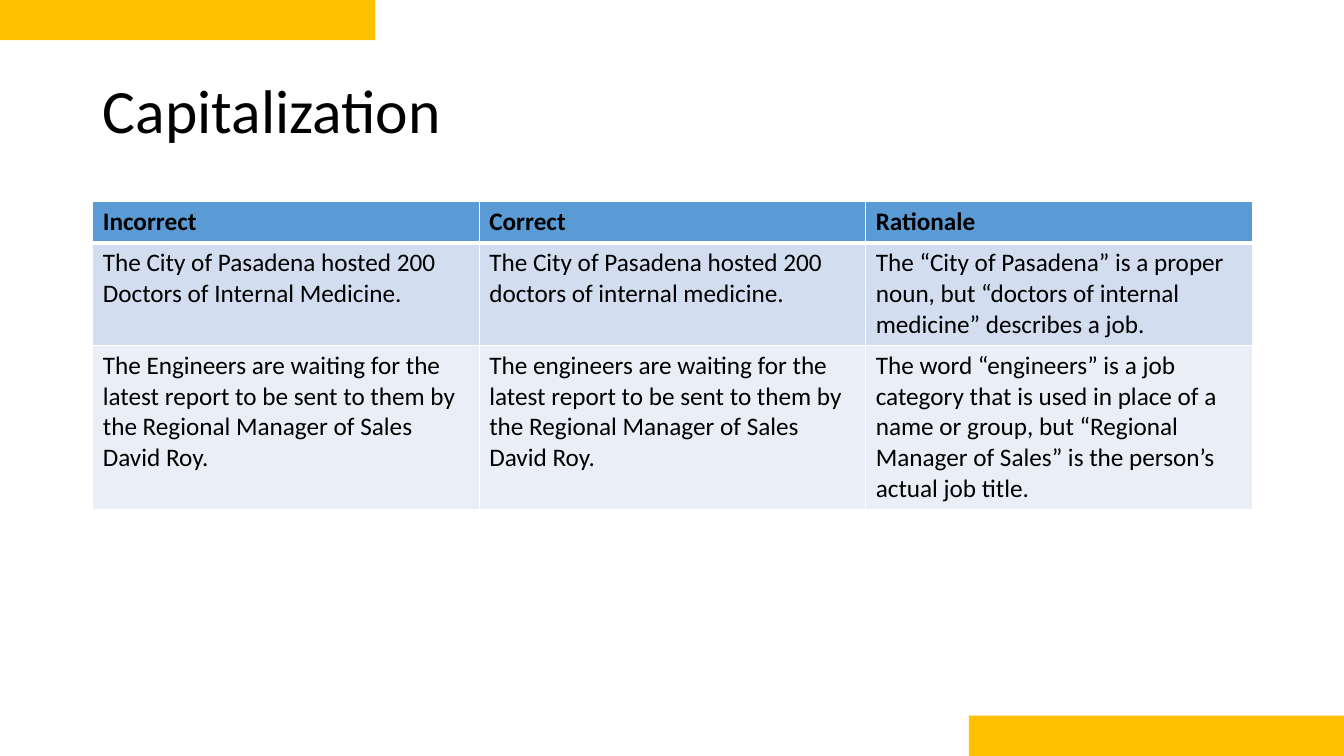
"""Build the slide on capitalization with its table and two corner bars."""
from dataclasses import dataclass
from typing import Any

from lxml.etree import SubElement
from pptx import Presentation
from pptx.dml.color import RGBColor
from pptx.enum.shapes import MSO_SHAPE
from pptx.enum.text import MSO_ANCHOR, MSO_AUTO_SIZE, PP_ALIGN
from pptx.oxml.ns import qn
from pptx.util import Inches, Pt

WIDTH, HEIGHT = 13.33, 7.5
LEFT, SPAN = 0.92, 11.5
WHITE, BLACK, GOLD = "FFFFFF", "000000", "FFC000"


@dataclass
class Bar:
    left: float
    top: float
    width: float = 3.72
    height: float = 0.4


@dataclass
class Row:
    texts: tuple[str, str, str]
    height: float
    fill: str
    bold: bool = False
    above: int = 1
    below: int = 1


BARS = [Bar(0, 0), Bar(WIDTH - 3.72, HEIGHT - 0.4)]

ROWS = [
    Row(("Incorrect", "Correct", "Rationale"), 0.41, "5B9BD5", bold=True, below=3),
    Row(
        (
            "The City of Pasadena hosted 200 Doctors of Internal Medicine.",
            "The City of Pasadena hosted 200 doctors of internal medicine.",
            "The “City of Pasadena” is a proper noun, but “doctors of internal "
            "medicine” describes a job.",
        ),
        1.0, "D2DEEF", above=3,
    ),
    Row(
        (
            "The Engineers are waiting for the latest report to be sent to them "
            "by the Regional Manager of Sales David Roy.",
            "The engineers are waiting for the latest report to be sent to them "
            "by the Regional Manager of Sales David Roy.",
            "The word “engineers” is a job category that is used in place of a "
            "name or group, but “Regional Manager of Sales” is the person’s "
            "actual job title.",
        ),
        1.6, "EAEFF7",
    ),
]


def color(code: str) -> RGBColor:
    return RGBColor.from_string(code)


def apply(target: Any, values: dict[str, Any]) -> None:
    for name, value in values.items():
        setattr(target, name, value)


def place(shape: Any, left: float, top: float, width: float, height: float) -> None:
    box = {"left": left, "top": top, "width": width, "height": height}
    apply(shape, {name: Inches(value) for name, value in box.items()})


def write(frame: Any, text: str, size: int, bold: bool = False) -> None:
    frame.text = text
    font = frame.paragraphs[0].runs[0].font
    apply(font, {"name": "Calibri", "size": Pt(size), "bold": bold})
    font.color.rgb = color(BLACK)


def paint(item: Any, code: str) -> None:
    item.fill.solid()
    item.fill.fore_color.rgb = color(code)


def edge(cell: Any, row: Row) -> None:
    props = cell._tc.get_or_add_tcPr()
    for side, points in {"L": 1, "R": 1, "T": row.above, "B": row.below}.items():
        line = SubElement(props, qn(f"a:ln{side}"), w=str(Pt(points)))
        SubElement(SubElement(line, qn("a:solidFill")), qn("a:srgbClr"), val=WHITE)


def add_title(slide: Any) -> None:
    title = slide.shapes.title
    place(title, LEFT, 0.4, SPAN, 1.45)
    write(title.text_frame, "Capitalization", 44)
    apply(title.text_frame, {
        "vertical_anchor": MSO_ANCHOR.MIDDLE,
        "auto_size": MSO_AUTO_SIZE.NONE,
        "word_wrap": True,
    })
    apply(title.text_frame.paragraphs[0], {
        "alignment": PP_ALIGN.LEFT,
        "line_spacing": 0.9,
    })


def add_grid(slide: Any) -> None:
    count = len(ROWS[0].texts)
    total = sum(row.height for row in ROWS)
    grid = slide.shapes.add_table(
        len(ROWS), count, Inches(LEFT), Inches(2), Inches(SPAN), Inches(total)
    ).table
    for column in grid.columns:
        column.width = Inches(SPAN / count)
    for i, row in enumerate(ROWS):
        grid.rows[i].height = Inches(row.height)
        for j, text in enumerate(row.texts):
            cell = grid.cell(i, j)
            write(cell.text_frame, text, 18, row.bold)
            edge(cell, row)
            paint(cell, row.fill)


def add_bar(slide: Any, bar: Bar) -> None:
    shape = slide.shapes.add_shape(MSO_SHAPE.RECTANGLE, 0, 0, 0, 0)
    place(shape, bar.left, bar.top, bar.width, bar.height)
    paint(shape, GOLD)
    shape.line.fill.background()
    shape.shadow.inherit = False


def main() -> None:
    deck = Presentation()
    apply(deck, {"slide_width": Inches(WIDTH), "slide_height": Inches(HEIGHT)})
    slide = deck.slides.add_slide(deck.slide_layouts[5])
    add_title(slide)
    add_grid(slide)
    for bar in BARS:
        add_bar(slide, bar)
    deck.save("out.pptx")


if __name__ == "__main__":
    main()
